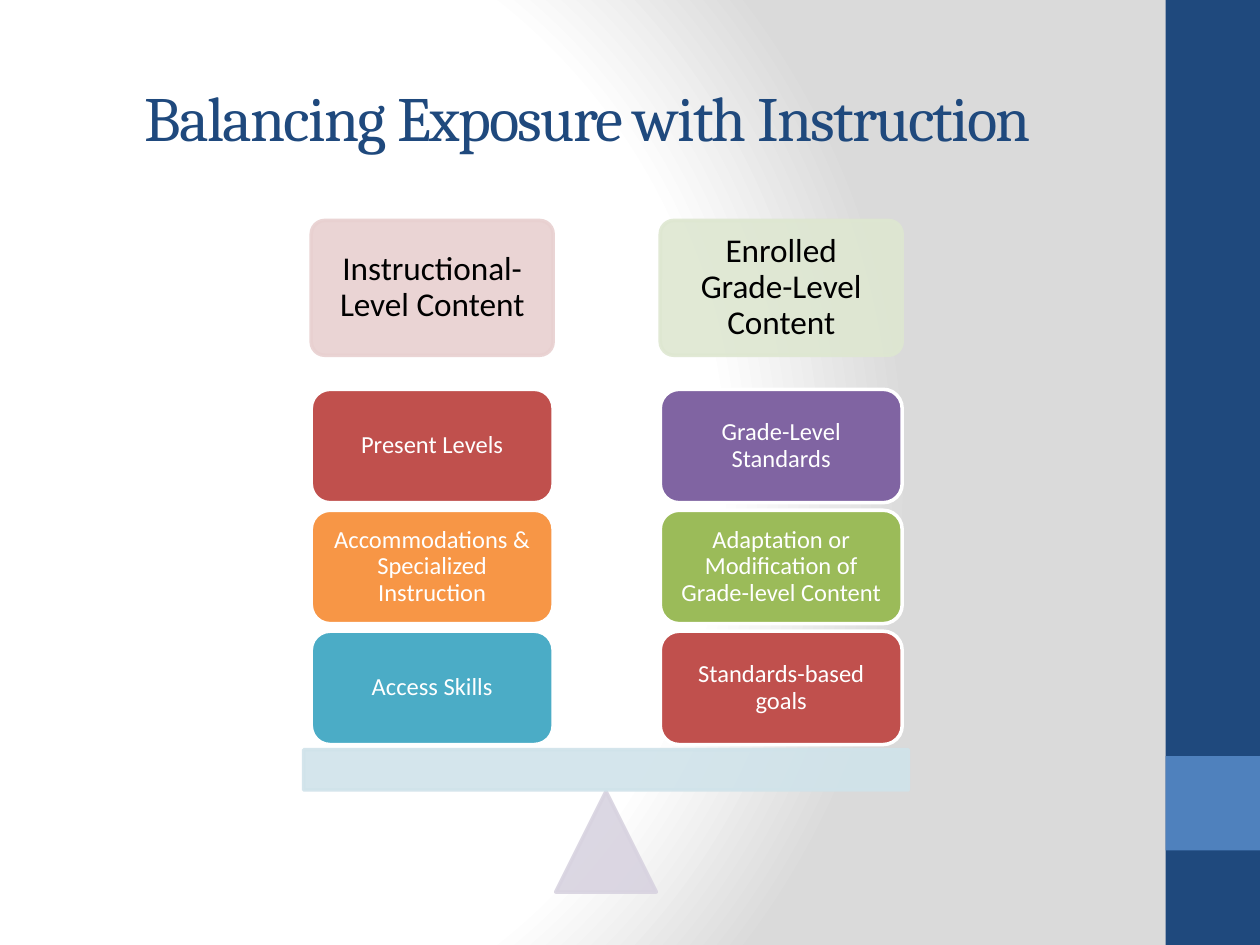
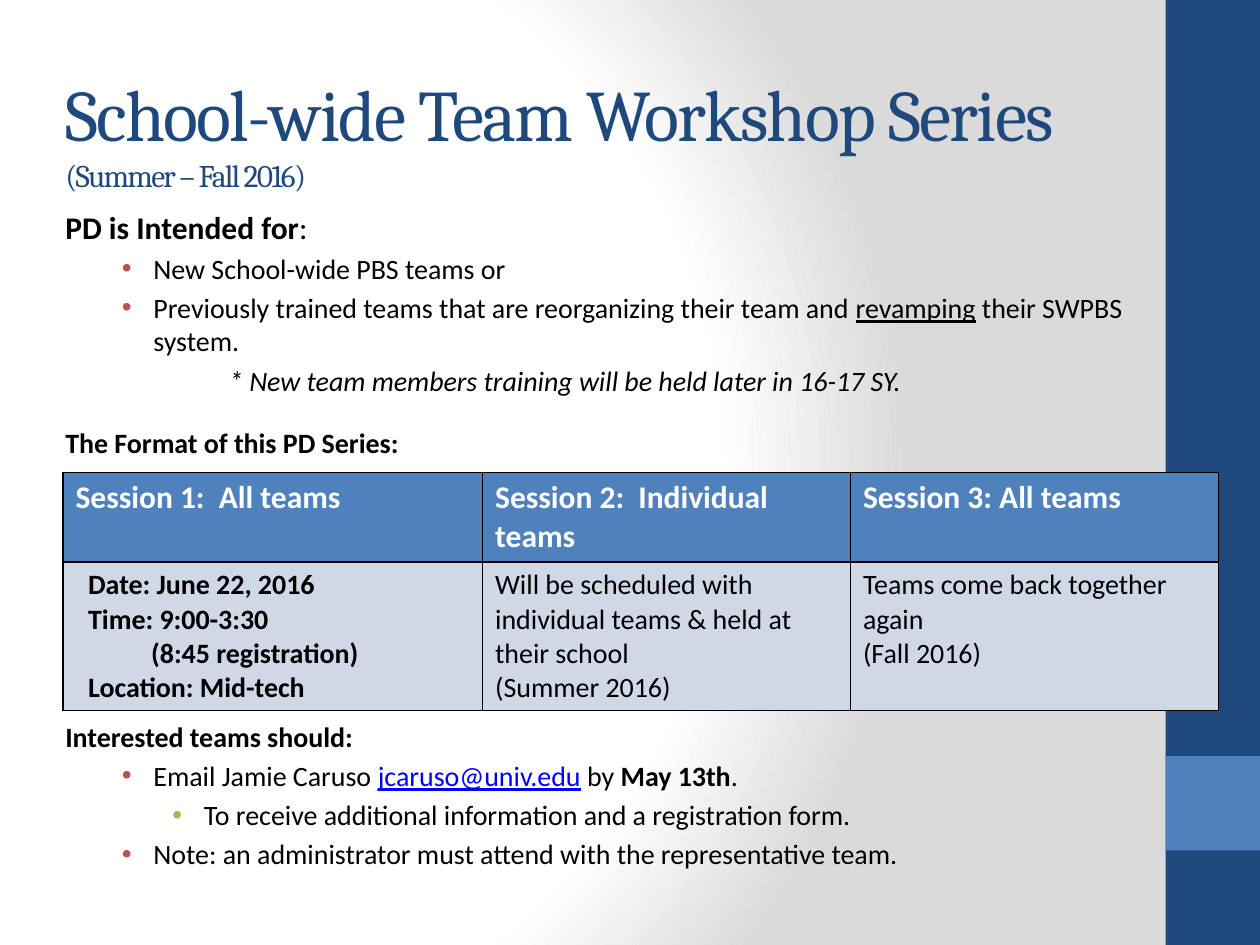
from lxml import etree
from pptx import Presentation
from pptx.dml.color import RGBColor
from pptx.enum.shapes import MSO_SHAPE
from pptx.enum.text import MSO_ANCHOR, PP_ALIGN
from pptx.oxml import parse_xml
from pptx.oxml.ns import nsdecls, qn
from pptx.util import Inches, Pt

NAVY = RGBColor(0x1F, 0x49, 0x7D)
BLUE = RGBColor(0x4F, 0x81, 0xBD)
PALE_BLUE = RGBColor(0xD0, 0xD8, 0xE8)
RED = RGBColor(0xC0, 0x50, 0x4D)
GREEN = RGBColor(0x9B, 0xBB, 0x59)
PURPLE = RGBColor(0x80, 0x64, 0xA2)
TEAL = RGBColor(0x4B, 0xAC, 0xC6)
ORANGE = RGBColor(0xF7, 0x96, 0x46)
PALE_RED = RGBColor(0xE8, 0xD0, 0xD0)
PALE_GREEN = RGBColor(0xDE, 0xE7, 0xD1)
PALE_PURPLE = RGBColor(0xD8, 0xD3, 0xE0)
PALE_TEAL = RGBColor(0xD0, 0xE3, 0xEA)
LINK = RGBColor(0x00, 0x00, 0xFF)
BLACK = RGBColor(0x00, 0x00, 0x00)
WHITE = RGBColor(0xFF, 0xFF, 0xFF)

RECTANGLE = MSO_SHAPE.RECTANGLE
ROUNDED = MSO_SHAPE.ROUNDED_RECTANGLE
TRIANGLE = MSO_SHAPE.ISOSCELES_TRIANGLE
LEFT, CENTER = PP_ALIGN.LEFT, PP_ALIGN.CENTER
TOP, MIDDLE = MSO_ANCHOR.TOP, MSO_ANCHOR.MIDDLE

TITLE_FONT = "Cambria"
BODY_FONT = "Calibri"

BACKGROUND = f"""<p:bg {nsdecls("p", "a")}><p:bgPr><a:gradFill rotWithShape="1"><a:gsLst>
<a:gs pos="0"><a:srgbClr val="FFFFFF"/></a:gs>
<a:gs pos="75000"><a:srgbClr val="FFFFFF"/></a:gs>
<a:gs pos="100000"><a:srgbClr val="DADADA"/></a:gs></a:gsLst>
<a:path path="circle"><a:fillToRect l="20000" t="50000" r="100000" b="50000"/></a:path>
</a:gradFill><a:effectLst/></p:bgPr></p:bg>"""


class Deck:
    """Holds the shared style and the slide being filled."""

    def __init__(self):
        self.presentation = Presentation()
        self.presentation.slide_width = Inches(10)
        self.presentation.slide_height = Inches(7.5)
        self.slide = None

    def new_slide(self):
        layout = self.presentation.slide_layouts[6]
        self.slide = self.presentation.slides.add_slide(layout)
        self.slide.element.cSld.insert(0, parse_xml(BACKGROUND))
        self.shape(RECTANGLE, 9.25, 0, 0.75, 7.5, NAVY)
        self.shape(RECTANGLE, 9.25, 6, 0.75, 0.75, BLUE)

    def shape(self, kind, left, top, width, height, fill, line=None, opacity=None):
        shape = self.slide.shapes.add_shape(
            kind, Inches(left), Inches(top), Inches(width), Inches(height))
        shape.shadow.inherit = False
        shape.fill.solid()
        shape.fill.fore_color.rgb = fill
        if line is None:
            shape.line.fill.background()
        else:
            shape.line.color.rgb = line
            shape.line.width = Pt(2)
        if opacity is not None:
            for color in shape.element.spPr.iter(qn("a:srgbClr")):
                etree.SubElement(color, qn("a:alpha"), val=str(opacity * 1000))
        return shape

    def box(self, left, top, width, height, fill, text, size, color, pale=False):
        """Add a rounded box with a centred label; a pale box is see-through."""
        shape = self.shape(ROUNDED, left, top, width, height, fill,
                           fill if pale else WHITE, 90 if pale else None)
        if pale:
            shape.adjustments[0] = 0.1
        frame = shape.text_frame
        frame.word_wrap = True
        frame.vertical_anchor = MIDDLE
        for side in ("left", "right", "top", "bottom"):
            setattr(frame, f"margin_{side}", Inches(0.11 if pale else 0.1))
        paragraph = frame.paragraphs[0]
        paragraph.alignment = CENTER
        paragraph.line_spacing = 0.9
        self.run(paragraph, text, size, color)

    def run(self, paragraph, text, size=16, color=BLACK, font=BODY_FONT,
            bold=False, italic=False, underline=False):
        run = paragraph.add_run()
        run.text = text
        run.font.name = font
        run.font.size = Pt(size)
        run.font.color.rgb = color
        run.font.bold, run.font.italic, run.font.underline = bold, italic, underline
        return run

    def text_frame(self, left, top, width, height, anchor=TOP):
        frame = self.slide.shapes.add_textbox(
            Inches(left), Inches(top), Inches(width), Inches(height)).text_frame
        frame.word_wrap = True
        frame.vertical_anchor = anchor
        return frame

    def title(self, left, top, width, height, lines, alignment=LEFT):
        """Add a title; lines holds (text, size) pairs split by line breaks."""
        paragraph = self.text_frame(left, top, width, height, MIDDLE).paragraphs[0]
        paragraph.alignment = alignment
        for index, (text, size) in enumerate(lines):
            if index:
                paragraph.add_line_break()
            run = self.run(paragraph, text, size, NAVY, TITLE_FONT)
            run.font._element.set("spc", "-100")

    def paragraph(self, frame, runs, margin=0, bullet=None, before=3.2):
        """Add a paragraph of (text, run options) pairs; bullet is a colour."""
        first = frame.paragraphs[0]
        paragraph = frame.add_paragraph() if first.runs else first
        paragraph.space_before = Pt(before)
        properties = paragraph._p.get_or_add_pPr()
        properties.set("marL", str(Inches(margin)))
        properties.set("indent", str(Inches(-0.25 if bullet else 0)))
        if bullet:
            color = etree.SubElement(properties, qn("a:buClr"))
            etree.SubElement(color, qn("a:srgbClr"), val=str(bullet))
            etree.SubElement(properties, qn("a:buFont"), typeface="Arial")
            etree.SubElement(properties, qn("a:buChar"), char="•")
        for text, options in runs:
            self.run(paragraph, text, **options)

    def table(self, left, top, columns, rows, cells):
        """Add a table; each cell is a list of (text, margin, options) lines."""
        table = self.slide.shapes.add_table(
            len(rows), len(columns), Inches(left), Inches(top),
            Inches(sum(columns)), Inches(sum(rows))).table
        for column, width in zip(table.columns, columns):
            column.width = Inches(width)
        for row, height in zip(table.rows, rows):
            row.height = Inches(height)
        for row_index, row_cells in enumerate(cells):
            for column_index, lines in enumerate(row_cells):
                cell = table.cell(row_index, column_index)
                for text, margin, options in lines:
                    self.paragraph(cell.text_frame, [(text, options)], margin, before=0)
                self.borders(cell)
                cell.fill.solid()
                cell.fill.fore_color.rgb = PALE_BLUE if row_index else BLUE

    def borders(self, cell):
        properties = cell._tc.get_or_add_tcPr()
        for side in ("lnL", "lnR", "lnT", "lnB"):
            line = etree.SubElement(properties, qn(f"a:{side}"), w=str(Pt(1)))
            fill = etree.SubElement(line, qn("a:solidFill"))
            etree.SubElement(fill, qn("a:srgbClr"), val=str(BLACK))


def build_balance(deck):
    deck.new_slide()
    deck.title(0.5, 0.3, 8.33, 1.25, [("Balancing Exposure with Instruction", 36)], CENTER)
    deck.shape(TRIANGLE, 4.41, 6.28, 0.8, 0.8, PALE_PURPLE, PALE_PURPLE, 90)
    deck.shape(RECTANGLE, 2.41, 5.95, 4.8, 0.32, PALE_TEAL, PALE_TEAL, 90)
    pans = [
        (2.47, "Instructional- Level Content", PALE_RED, [
            ("Present Levels", RED),
            ("Accommodations & Specialized Instruction", ORANGE),
            ("Access Skills", TEAL)]),
        (5.24, "Enrolled Grade-Level Content", PALE_GREEN, [
            ("Grade-Level Standards", PURPLE),
            ("Adaptation or Modification of Grade-level Content", GREEN),
            ("Standards-based goals", RED)]),
    ]
    for left, heading, heading_fill, weights in pans:
        deck.box(left, 1.75, 1.92, 1.07, heading_fill, heading, 19, BLACK, pale=True)
        for index, (label, fill) in reversed(list(enumerate(weights))):
            deck.box(left, 3.09 + 0.96 * index, 1.92, 0.9, fill, label, 14, WHITE)


def build_workshop(deck):
    plain, bold = {}, {"bold": True}
    header = {"size": 18, "color": WHITE, "bold": True}
    deck.new_slide()
    deck.title(0.42, 0.5, 9, 1.08, [("School-wide Team Workshop Series ", 41.4),
                                    ("(Summer – Fall 2016)", 18)])

    audience = deck.text_frame(0.42, 1.6, 9, 2.1)
    deck.paragraph(audience, [("PD is Intended for", {"size": 18, "bold": True}),
                              (":", {"size": 18})], before=0)
    deck.paragraph(audience, [("New School-wide PBS teams or", plain)], 0.7, RED)
    deck.paragraph(audience, [
        ("Previously trained teams that are reorganizing their team and ", plain),
        ("revamping", {"underline": True}),
        (" their SWPBS system.", plain)], 0.7, RED)
    deck.paragraph(audience, [
        ("* New team members training will be held later in 16-17 SY.",
         {"italic": True})], 1.3)
    deck.paragraph(audience, [("The Format of this PD Series:", bold)], before=16.5)

    steps = deck.text_frame(0.42, 5.66, 9, 1.6)
    deck.paragraph(steps, [("Interested teams should:", bold)], before=0)
    deck.paragraph(steps, [
        ("Email Jamie Caruso ", plain),
        ("jcaruso@univ.edu", {"color": LINK, "underline": True}),
        (" by ", plain), ("May 13th", bold), (".", plain)], 0.7, RED)
    deck.paragraph(steps, [
        ("To receive additional information and a registration form.", plain)], 1.1, GREEN)
    deck.paragraph(steps, [
        ("Note: an administrator must attend with the representative team.", plain)],
        0.7, RED)

    deck.table(0.5, 3.75, [3.33, 2.92, 2.92], [0.71, 1.18], [
        [[("Session 1:  All teams", 0, header)],
         [("Session 2:  Individual teams", 0, header)],
         [("Session 3: All teams", 0, header)]],
        [[("Date: June 22, 2016", 0.1, bold),
          ("Time: 9:00-3:30", 0.1, bold),
          ("(8:45 registration)", 0.6, bold),
          ("Location: Mid-tech", 0.1, bold)],
         [("Will be scheduled with individual teams & held at their school", 0, plain),
          ("(Summer 2016)", 0, plain)],
         [("Teams come back together again", 0, plain),
          ("(Fall 2016)", 0, plain)]],
    ])


def main():
    deck = Deck()
    build_balance(deck)
    build_workshop(deck)
    deck.presentation.save("out.pptx")


if __name__ == "__main__":
    main()
